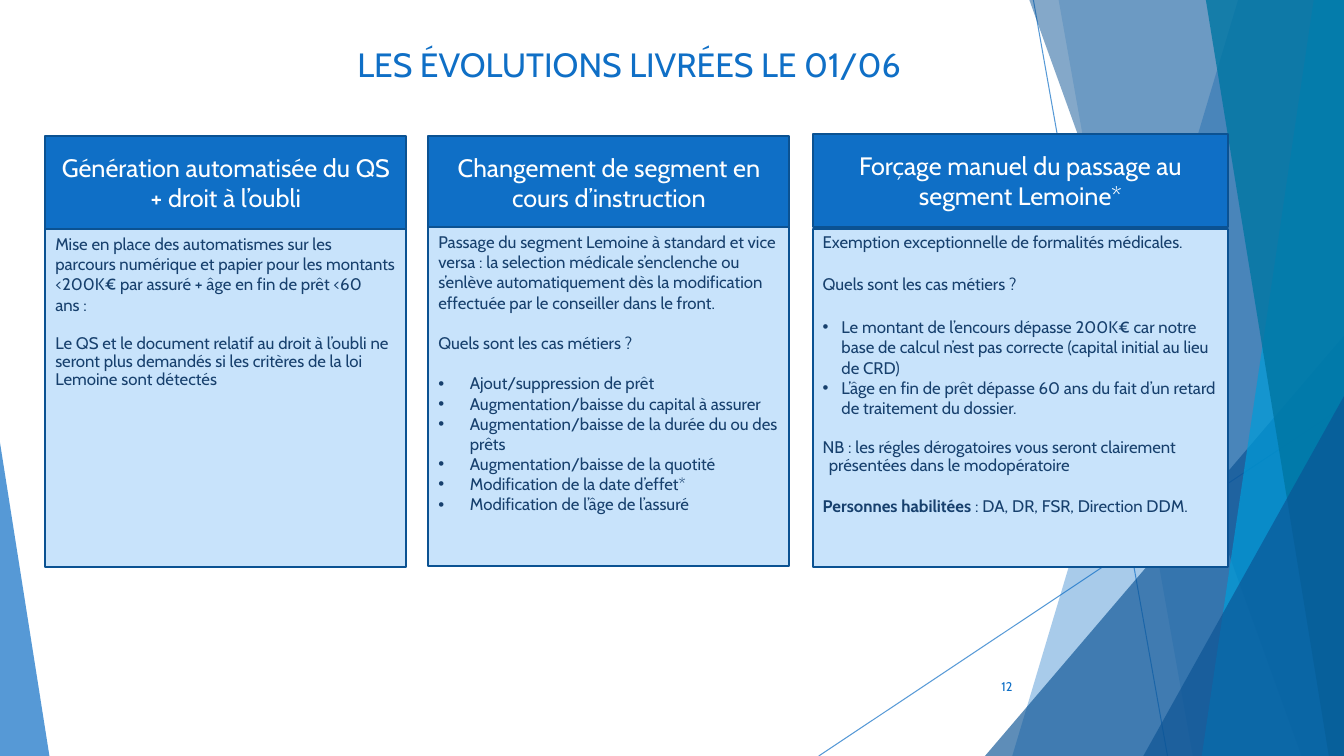
import pptx
import pptx.dml.color
import pptx.enum.shapes
import pptx.enum.text
import pptx.oxml.ns
import pptx.util
from dataclasses import dataclass
from lxml import etree

RGBColor = pptx.dml.color.RGBColor
Pt = pptx.util.Pt
Shapes = pptx.enum.shapes.MSO_SHAPE
Align = pptx.enum.text.PP_ALIGN
Anchor = pptx.enum.text.MSO_ANCHOR
qn = pptx.oxml.ns.qn

BLUE = RGBColor(0x0F, 0x6F, 0xC6)
DEEP_BLUE = RGBColor(0x0B, 0x53, 0x94)
CYAN = RGBColor(0x00, 0x9D, 0xD9)
TEAL = RGBColor(0x00, 0x76, 0xA3)
PALE_BLUE = RGBColor(0xC8, 0xE3, 0xFB)
BORDER = RGBColor(0x0B, 0x52, 0x92)
NAVY = RGBColor(0x17, 0x40, 0x6D)
WHITE = RGBColor(0xFF, 0xFF, 0xFF)

FONT = "Cabin"
WIDTH = pptx.util.Inches(13.33)
HEIGHT = pptx.util.Inches(7.5)
TIGHT = 0.9


@dataclass
class Line:
    """A paragraph; lengths in points, bold_lead is its bold beginning."""
    text: str
    gap: float = 0
    spacing: float = 1.0
    hang: float = 0
    bullet: bool = False
    bold_lead: str = ""


# left, header top, body top, width, body height (percent of the slide), header, lines
CARDS = [
    (3.38, 18, 30.27, 26.86, 44.8, "Génération automatisée du QS + droit à l’oubli", [
        Line("Mise en place des automatismes sur les parcours numérique et papier "
             "pour les montants <200K€ par assuré + âge en fin de prêt <60 ans :"),
        Line("Le QS et le document relatif au droit à l’oubli ne seront plus demandés "
             "si les critères de la loi Lemoine sont détectés", 14.5, TIGHT),
    ]),
    (31.88, 18, 30, 26.86, 44.93, "Changement de segment en cours d’instruction", [
        Line("Passage du segment Lemoine à standard et vice versa : la selection médicale "
             "s’enclenche ou s’enlève automatiquement dès la modification effectuée "
             "par le conseiller dans le front."),
        Line("Quels sont les cas métiers ?", 14.5),
        Line("Ajout/suppression de prêt", 14.5, hang=22.5, bullet=True),
        Line("Augmentation/baisse du capital à assurer", hang=22.5, bullet=True),
        Line("Augmentation/baisse de la durée du ou des prêts", hang=22.5, bullet=True),
        Line("Augmentation/baisse de la quotité", hang=22.5, bullet=True),
        Line("Modification de la date d’effet*", hang=22.5, bullet=True),
        Line("Modification de l’âge de l’assuré", hang=22.5, bullet=True),
    ]),
    (60.47, 17.73, 30.27, 30.91, 44.8, "Forçage manuel du passage au segment Lemoine*", [
        Line("Exemption exceptionnelle de formalités médicales.", 0, TIGHT, 4.5),
        Line("Quels sont les cas métiers ?", 17, TIGHT),
        Line("Le montant de l’encours dépasse 200K€ car notre base de calcul n’est pas "
             "correcte (capital initial au lieu de CRD)", 16.5, hang=13.5, bullet=True),
        Line("L’âge en fin de prêt dépasse 60 ans du fait d’un retard de traitement "
             "du dossier.", hang=13.5, bullet=True),
        Line("NB : les régles dérogatoires vous seront clairement présentées dans "
             "le modopératoire", 15, TIGHT, 4.5),
        Line(": DA, DR, FSR, Direction DDM.", 16.5, TIGHT, 4.5,
             bold_lead="Personnes habilitées "),
    ]),
]


def across(percent):
    return round(WIDTH * percent / 100)


def down(percent):
    return round(HEIGHT * percent / 100)


def frame(left, top, width, height):
    return across(left), down(top), across(width), down(height)


def set_opacity(element, percent):
    color = element.find(".//" + qn("a:srgbClr"))
    etree.SubElement(color, qn("a:alpha")).set("val", str(percent * 1000))


def paint_facet(shape, color, opacity):
    shape.shadow.inherit = False
    shape.fill.solid()
    shape.fill.fore_color.rgb = color
    set_opacity(shape.fill._xPr, opacity)
    shape.line.fill.background()


def add_band(page, top_left, bottom_left, color, opacity):
    """Full-height facet between a slanted left edge and the slide's right edge."""
    builder = page.shapes.build_freeform(across(top_left), 0)
    builder.add_line_segments([(WIDTH, 0), (WIDTH, HEIGHT), (across(bottom_left), HEIGHT)])
    paint_facet(builder.convert_to_shape(), color, opacity)


def add_corner(page, left, top, width, apex, color, opacity):
    """Right triangle standing on the bottom edge."""
    corner = page.shapes.add_shape(Shapes.ISOSCELES_TRIANGLE,
                                   *frame(left, top, width, 100 - top))
    corner.adjustments[0] = apex
    paint_facet(corner, color, opacity)


def add_thin_line(page, start, end):
    line = page.shapes.add_connector(pptx.enum.shapes.MSO_CONNECTOR.STRAIGHT,
                                     across(start[0]), down(start[1]),
                                     across(end[0]), down(end[1]))
    line.line.color.rgb = BLUE
    line.line.width = Pt(0.75)
    properties = line._element.spPr
    set_opacity(properties, 70)
    etree.SubElement(properties, qn("a:effectLst"))


def add_background(page):
    add_thin_line(page, (76.89, 0), (86.87, 100))
    add_thin_line(page, (100, 53.73), (60.92, 100))
    add_band(page, 92.12, 75.32, BLUE, 36)
    add_band(page, 78.77, 88.75, BLUE, 20)
    add_corner(page, 73.29, 44.4, 26.71, 1, DEEP_BLUE, 66)
    add_band(page, 76.59, 96.85, DEEP_BLUE, 50)
    add_band(page, 97.75, 89.42, CYAN, 70)
    add_band(page, 89.72, 98.87, TEAL, 80)
    add_corner(page, 85.07, 52.4, 14.93, 1, DEEP_BLUE, 66)
    add_corner(page, 0, 58.53, 3.68, 0, BLUE, 70)


def format_span(span, size, color, bold=False):
    span.font.name = FONT
    span.font.size = Pt(size)
    span.font.color.rgb = color
    span.font.bold = bold


def write_lines(box, lines, size, color, align, anchor):
    text_frame = box.text_frame
    text_frame.word_wrap = True
    text_frame.vertical_anchor = anchor
    text_frame.text = "\n".join(line.bold_lead or line.text for line in lines)
    for para, line in zip(text_frame.paragraphs, lines):
        para.alignment = align
        properties = para._p.get_or_add_pPr()
        if line.hang:
            properties.set("marL", str(Pt(line.hang)))
            properties.set("indent", str(-Pt(line.hang)))
        if line.bullet:
            etree.SubElement(properties, qn("a:buFont")).set("typeface", "Arial")
            etree.SubElement(properties, qn("a:buChar")).set("char", "•")
        para.line_spacing = line.spacing
        para.space_before = Pt(line.gap)
        if line.bold_lead:
            para.add_run().text = line.text
        for position, span in enumerate(para.runs):
            format_span(span, size, color, bool(line.bold_lead) and position == 0)


def add_label(page, place, text, size, align, anchor):
    box = page.shapes.add_textbox(*frame(*place))
    write_lines(box, [Line(text)], size, BLUE, align, anchor)


def add_panel(page, place, fill):
    panel = page.shapes.add_shape(Shapes.RECTANGLE, *frame(*place))
    panel.shadow.inherit = False
    panel.fill.solid()
    panel.fill.fore_color.rgb = fill
    panel.line.color.rgb = BORDER
    panel.line.width = Pt(1.5)
    return panel


def add_card(page, left, header_top, body_top, width, body_height, heading, lines):
    header = add_panel(page, (left, header_top, width, 12.27), BLUE)
    write_lines(header, [Line(heading)], 18, WHITE, Align.CENTER, Anchor.MIDDLE)
    body = add_panel(page, (left, body_top, width, body_height), PALE_BLUE)
    write_lines(body, lines, 12, NAVY, Align.LEFT, Anchor.TOP)


def main():
    deck = pptx.Presentation()
    deck.slide_width = WIDTH
    deck.slide_height = HEIGHT
    page = deck.slides.add_slide(deck.slide_layouts[6])
    add_background(page)
    add_label(page, (70.44, 88.13, 5.63, 5.33), "12", 9, Align.RIGHT, Anchor.MIDDLE)
    add_label(page, (23.86, 5.2, 46.44, 7.2), "LES ÉVOLUTIONS LIVRÉES LE 01/06 ",
              24, Align.CENTER, Anchor.TOP)
    for card in CARDS:
        add_card(page, *card)
    deck.save("out.pptx")


if __name__ == "__main__":
    main()
